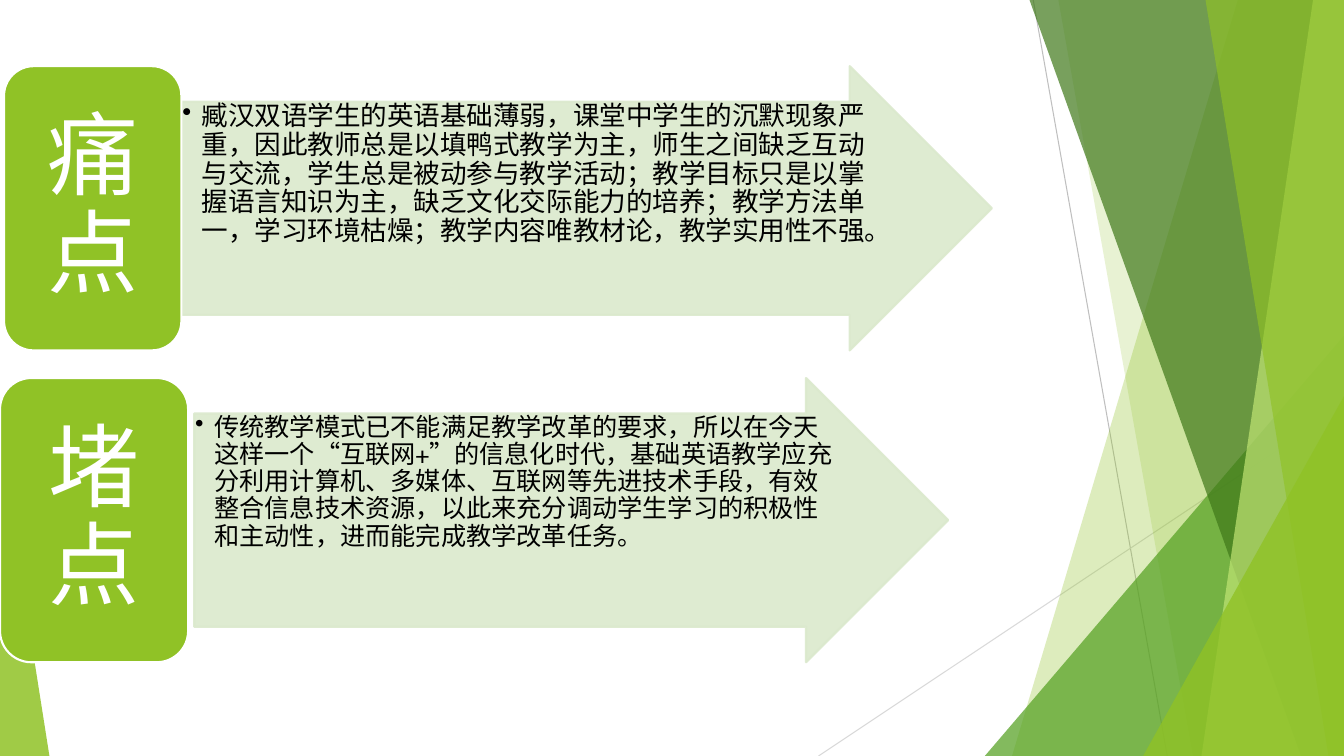
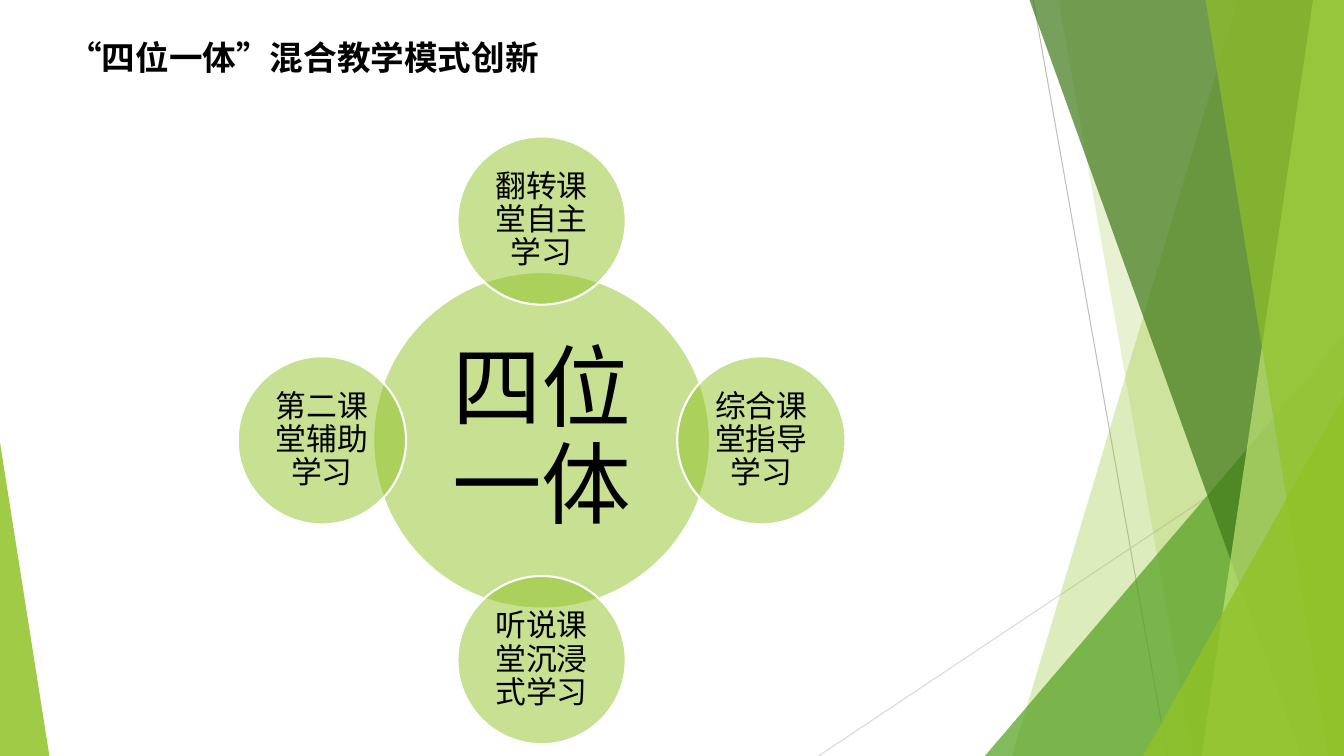
"""Build two slides on bilingual English teaching over a shared faceted backdrop."""
from itertools import cycle

from lxml import etree
from pptx import Presentation
from pptx.dml.color import RGBColor
from pptx.enum.lang import MSO_LANGUAGE_ID
from pptx.enum.shapes import MSO_CONNECTOR, MSO_SHAPE
from pptx.enum.text import MSO_ANCHOR, PP_ALIGN
from pptx.oxml.ns import qn
from pptx.util import Inches, Pt

STRAIGHT = MSO_CONNECTOR.STRAIGHT
TRIANGLE, ARROW = MSO_SHAPE.ISOSCELES_TRIANGLE, MSO_SHAPE.RIGHT_ARROW
ROUNDED, OVAL = MSO_SHAPE.ROUNDED_RECTANGLE, MSO_SHAPE.OVAL
TOP, MIDDLE = MSO_ANCHOR.TOP, MSO_ANCHOR.MIDDLE
LEFT, CENTER, JUSTIFY = PP_ALIGN.LEFT, PP_ALIGN.CENTER, PP_ALIGN.JUSTIFY
CHINESE = MSO_LANGUAGE_ID.SIMPLIFIED_CHINESE

GREEN, LEAF, FOREST, LIME, PALE = "90C226", "54A021", "3F7819", "C0E474", "DBE9CD"
WHITE, BLACK = "FFFFFF", "000000"
CJK_FONT = "Noto Sans CJK SC"

prs = Presentation()
prs.slide_width, prs.slide_height = Inches(40 / 3), Inches(7.5)
COL, ROW = prs.slide_width / 100, prs.slide_height / 100


def grid(*shares):
    """Turn alternating horizontal and vertical percentages into lengths."""
    return [round(n * unit) for n, unit in zip(shares, cycle((COL, ROW)))]


def paint(sp, fill=None, opacity=100, line=None, line_opacity=100, width=1.5):
    """Colour the fill and line of a shape and clear its shadow."""
    parts = [(sp.line.fill, line, line_opacity, "a:ln/a:solidFill/a:srgbClr")]
    if fill:
        parts.append((sp.fill, fill, opacity, "a:solidFill/a:srgbClr"))
    spPr = sp.element.spPr
    for fmt, color, alpha, tag in parts:
        if color is None:
            fmt.background()
            continue
        fmt.solid()
        fmt.fore_color.rgb = RGBColor.from_string(color)
        if alpha < 100:
            clr = spPr.find("/".join(qn(t) for t in tag.split("/")))
            etree.SubElement(clr, qn("a:alpha")).set("val", str(alpha * 1000))
    if line:
        sp.line.width = Pt(width)
    etree.SubElement(spPr, qn("a:effectLst"))


layout = prs.slide_layouts[6]
for ph in list(layout.placeholders):
    ph.element.getparent().remove(ph.element)
points_slide, model_slide = [prs.slides.add_slide(layout) for _ in range(2)]

backdrop = points_slide.shapes.add_group_shape()
for color, ends in (("BFBFBF", (76.88, 0, 86.85, 100)), ("D9D9D9", (100, 53.7, 60.9, 100))):
    paint(backdrop.shapes.add_connector(STRAIGHT, *grid(*ends)), line=color, width=0.75)

facets = [
    ("band", GREEN, 30, (92.1, 75.3)),
    ("band", GREEN, 20, (78.75, 88.75)),
    ("triangle", LEAF, 72, (73.28, 44.4, 26.72, 55.6)),
    ("band", FOREST, 70, (76.6, 96.8)),
    ("band", LIME, 70, (97.7, 89.4)),
    ("band", GREEN, 65, (89.7, 98.85)),
    ("triangle", GREEN, 80, (85.05, 52.4, 14.95, 47.6)),
    ("triangle", GREEN, 85, (0, 58.5, 3.68, 41.5)),
]
for kind, color, opacity, place in facets:
    if kind == "band":
        top, bottom = place
        outline = backdrop.shapes.build_freeform(*grid(top, 0), scale=1.0)
        corners = ((100, 0), (100, 100), (bottom, 100))
        outline.add_line_segments([grid(*corner) for corner in corners], close=True)
        sp = outline.convert_to_shape()
    else:
        sp = backdrop.shapes.add_shape(TRIANGLE, *grid(*place))
        sp.adjustments[0] = 1 if place[0] else 0
    paint(sp, color, opacity)
layout.shapes.element.append(backdrop.element)

arrow = dict(preset=ARROW, colors=(PALE, 90, PALE, 90), ink=BLACK, inset=(0.7, 0.7),
             anchor=TOP, align=LEFT)
label = dict(preset=ROUNDED, colors=(GREEN, 100, WHITE), ink=WHITE, inset=(19.4, 10),
             anchor=MIDDLE, align=CENTER)
circle = dict(preset=OVAL, colors=(GREEN, 50, WHITE), ink=BLACK, inset=(2, 2),
              anchor=MIDDLE, align=CENTER)

items = []
rows = [
    (8.75, 0.3, 13.2, "痛点", 13.5, 60.3, 19,
     "臧汉双语学生的英语基础薄弱，课堂中学生的沉默现象严重，因此教师总是以填鸭式教学为主，"
     "师生之间缺乏互动与交流，学生总是被动参与教学活动；教学目标只是以掌握语言知识为主，"
     "缺乏文化交际能力的培养；教学方法单一，学习环境枯燥；教学内容唯教材论，教学实用性不强。"),
    (50, 0, 14, "堵点", 14.45, 56.1, 18,
     "传统教学模式已不能满足教学改革的要求，所以在今天这样一个“互联网+”的信息化时代，"
     "基础英语教学应充分利用计算机、多媒体、互联网等先进技术手段，有效整合信息技术资源，"
     "以此来充分调动学生学习的积极性和主动性，进而能完成教学改革任务。"),
]
for y, label_x, label_w, name, arrow_x, arrow_w, size, body in rows:
    items.append((points_slide, arrow, (arrow_x, y, arrow_w, 37.6), body, size))
    items.append((points_slide, label, (label_x, y, label_w, 37.6), name, 65))

HUB_X, HUB_Y, HUB_W, HUB_H = 40.3, 58.25, 25.05, 44.5
ORBIT_X, ORBIT_Y = 16.35, 29.07
orbit = [
    (0, 0, 1, "四位一体", 64),
    (0, -1, 0.5, "翻转课堂自主学习", 22),
    (1, 0, 0.5, "综合课堂指导学习", 22),
    (0, 1, 0.5, "听说课堂沉浸式学习", 22),
    (-1, 0, 0.5, "第二课堂辅助学习", 22),
]
for dx, dy, scale, text, size in orbit:
    w, h = HUB_W * scale, HUB_H * scale
    place = (HUB_X + dx * ORBIT_X - w / 2, HUB_Y + dy * ORBIT_Y - h / 2, w, h)
    items.append((model_slide, circle, place, text, size))

for s, style, place, text, size in items:
    sp = s.shapes.add_shape(style["preset"], *grid(*place))
    paint(sp, *style["colors"])
    tf = sp.text_frame
    side, edge = (Pt(n) for n in style["inset"])
    frame = dict(word_wrap=True, vertical_anchor=style["anchor"], margin_left=side,
                 margin_right=side, margin_top=edge, margin_bottom=edge)
    for key, value in frame.items():
        setattr(tf, key, value)
    p = tf.paragraphs[0]
    p.alignment, p.line_spacing = style["align"], 0.9
    if style is arrow:
        sp.adjustments[0], sp.adjustments[1] = 0.75, 0.5
        pPr = p._p.get_or_add_pPr()
        pPr.set("marL", str(Pt(13.7)))
        pPr.set("indent", str(-Pt(13.7)))
        etree.SubElement(pPr, qn("a:buChar")).set("char", "•")
    r = p.add_run()
    r.text = text
    for key, value in dict(name="Karla", size=Pt(size), language_id=CHINESE).items():
        setattr(r.font, key, value)
    r.font.color.rgb = RGBColor.from_string(style["ink"])
    etree.SubElement(r.font._element, qn("a:ea")).set("typeface", CJK_FONT)

tf = model_slide.shapes.add_textbox(*grid(4.35, 4.25, 50.1, 6.7)).text_frame
tf.word_wrap = True
p = tf.paragraphs[0]
p.alignment = JUSTIFY
for text, face in (("“", CJK_FONT), ("四位一体”混合教学模式创新", "Times New Roman")):
    r = p.add_run()
    r.text = text
    for key, value in dict(name=face, size=Pt(24), bold=True, language_id=CHINESE).items():
        setattr(r.font, key, value)
    r.font.color.rgb = RGBColor.from_string(BLACK)
    etree.SubElement(r.font._element, qn("a:ea")).set("typeface", CJK_FONT)

prs.save("out.pptx")
